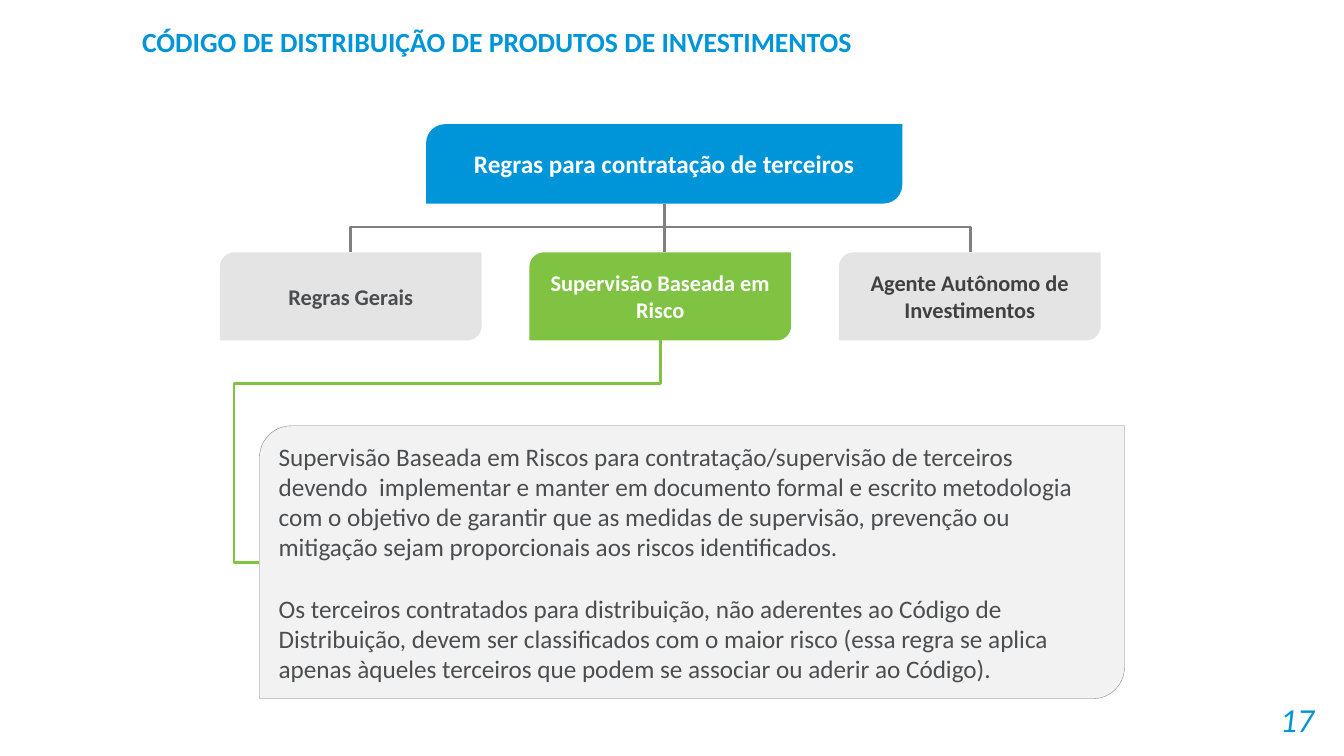
from lxml import etree
from pptx import Presentation
from pptx import util as u
from pptx.dml.color import RGBColor
from pptx.enum import shapes, text
from pptx.oxml.ns import qn

BLUE, GREEN, WHITE = "0095D9", "80C342", "FFFFFF"
LIGHT, PANEL, LINE = "E4E4E4", "F2F2F2", "808080"
DARK, CHARCOAL = "4C4D4F", "404040"
CENTER, LEFT, RIGHT = (text.PP_ALIGN.CENTER, text.PP_ALIGN.LEFT,
                       text.PP_ALIGN.RIGHT)


def rgb(value):
    return RGBColor.from_string(value)


class Deck:
    """Holds the font and the current slide, and draws elements in cm."""

    font = "Calibri"

    def __init__(self, prs):
        self.slide = prs.slides.add_slide(prs.slide_layouts[6])

    def set_text(self, sp, paragraphs, color, align, gap=0, **fmt):
        """Fill a shape with paragraphs, gap points apart."""
        tf = sp.text_frame
        tf.word_wrap = True
        tf.vertical_anchor = text.MSO_ANCHOR.MIDDLE
        for i, words in enumerate(paragraphs):
            p = tf.add_paragraph() if i else tf.paragraphs[0]
            p.alignment = align
            if i:
                p.space_before = u.Pt(gap)
            r = p.add_run()
            r.text = words
            r.font.color.rgb = rgb(color)
            for name, value in {"name": self.font, **fmt}.items():
                setattr(r.font, name, value)

    def label(self, box, words, color, align, **fmt):
        sp = self.slide.shapes.add_textbox(*map(u.Cm, box))
        self.set_text(sp, [words], color, align, **fmt)

    def card(self, box, fill, paragraphs, color, align=CENTER, corner=0.167,
             outline=None, **fmt):
        """Rectangle with two opposite corners rounded."""
        sp = self.slide.shapes.add_shape(
            shapes.MSO_SHAPE.ROUND_2_DIAG_RECTANGLE, *map(u.Cm, box))
        sp.shadow.inherit = False
        sp.adjustments[0] = corner
        sp.fill.solid()
        sp.fill.fore_color.rgb = rgb(fill)
        if outline:
            self.stroke(sp.line, outline, 0.25)
        else:
            sp.line.fill.background()
        self.set_text(sp, paragraphs, color, align, **fmt)

    def stroke(self, line, color, width=2):
        line.color.rgb = rgb(color)
        line.width = u.Pt(width)

    def elbow(self, points, color):
        """Open line with right-angled bends."""
        start, *rest = [(u.Cm(x), u.Cm(y)) for x, y in points]
        builder = self.slide.shapes.build_freeform(*start)
        builder.add_line_segments(rest, close=False)
        sp = builder.convert_to_shape()
        sp.shadow.inherit = False
        sp.fill.background()
        self.stroke(sp.line, color)

    def straight(self, start, end, color):
        c = self.slide.shapes.add_connector(
            shapes.MSO_CONNECTOR.STRAIGHT, *map(u.Cm, start + end))
        self.stroke(c.line, color)
        etree.SubElement(c._element.spPr, qn("a:effectLst"))


def main():
    prs = Presentation()
    prs.slide_width, prs.slide_height = u.Cm(33.87), u.Cm(19.05)
    deck = Deck(prs)

    deck.label((24.87, 17.6, 8.5, 1.02), "17", BLUE, RIGHT,
               size=u.Pt(24), italic=True)
    deck.label((3.33, 0.3, 18.62, 1.47),
               "CÓDIGO DE DISTRIBUIÇÃO DE PRODUTOS DE INVESTIMENTOS",
               BLUE, LEFT, size=u.Pt(19.8), bold=True)

    # Topic and its three branches
    deck.card((10.74, 3.13, 12, 2), BLUE,
              ["Regras para contratação de terceiros"], WHITE,
              corner=0.237, size=u.Pt(18), bold=True)

    left, top, width, height, step = 5.54, 6.36, 6.6, 2.22, 7.8
    first, last = 8.84, 24.46
    deck.elbow([(first, top), (first, 5.72), (last, 5.72), (last, top)], LINE)
    branches = [
        ("Regras Gerais", LIGHT, DARK),
        ("Supervisão Baseada em Risco", GREEN, WHITE),
        ("Agente Autônomo de Investimentos", LIGHT, CHARCOAL),
    ]
    for i, (name, fill, color) in enumerate(branches):
        deck.card((left + i * step, top, width, height), fill, [name], color,
                  size=u.Pt(16), bold=True)

    # Details of the highlighted branch
    panel_left = 6.54
    deck.card((panel_left, 10.73, 21.8, 6.88), PANEL, [
        "Supervisão Baseada em Riscos para contratação/supervisão de "
        "terceiros devendo  implementar e manter em documento formal e "
        "escrito metodologia com o objetivo de garantir que as medidas de "
        "supervisão, prevenção ou mitigação sejam proporcionais aos riscos "
        "identificados.",
        "Os terceiros contratados para distribuição, não aderentes ao Código "
        "de Distribuição, devem ser classificados com o maior risco (essa "
        "regra se aplica apenas àqueles terceiros que podem se associar ou "
        "aderir ao Código).",
    ], DARK, align=LEFT, corner=0.116, outline=LINE, gap=22, size=u.Pt(18))

    middle = left + step + width / 2
    deck.elbow([(middle, top + height), (middle, 9.66), (5.9, 9.66),
                (5.9, 14.17), (panel_left, 14.17)], GREEN)
    deck.straight((16.74, 5.13), (16.74, top), "7F7F7F")

    prs.save("out.pptx")


if __name__ == "__main__":
    main()
